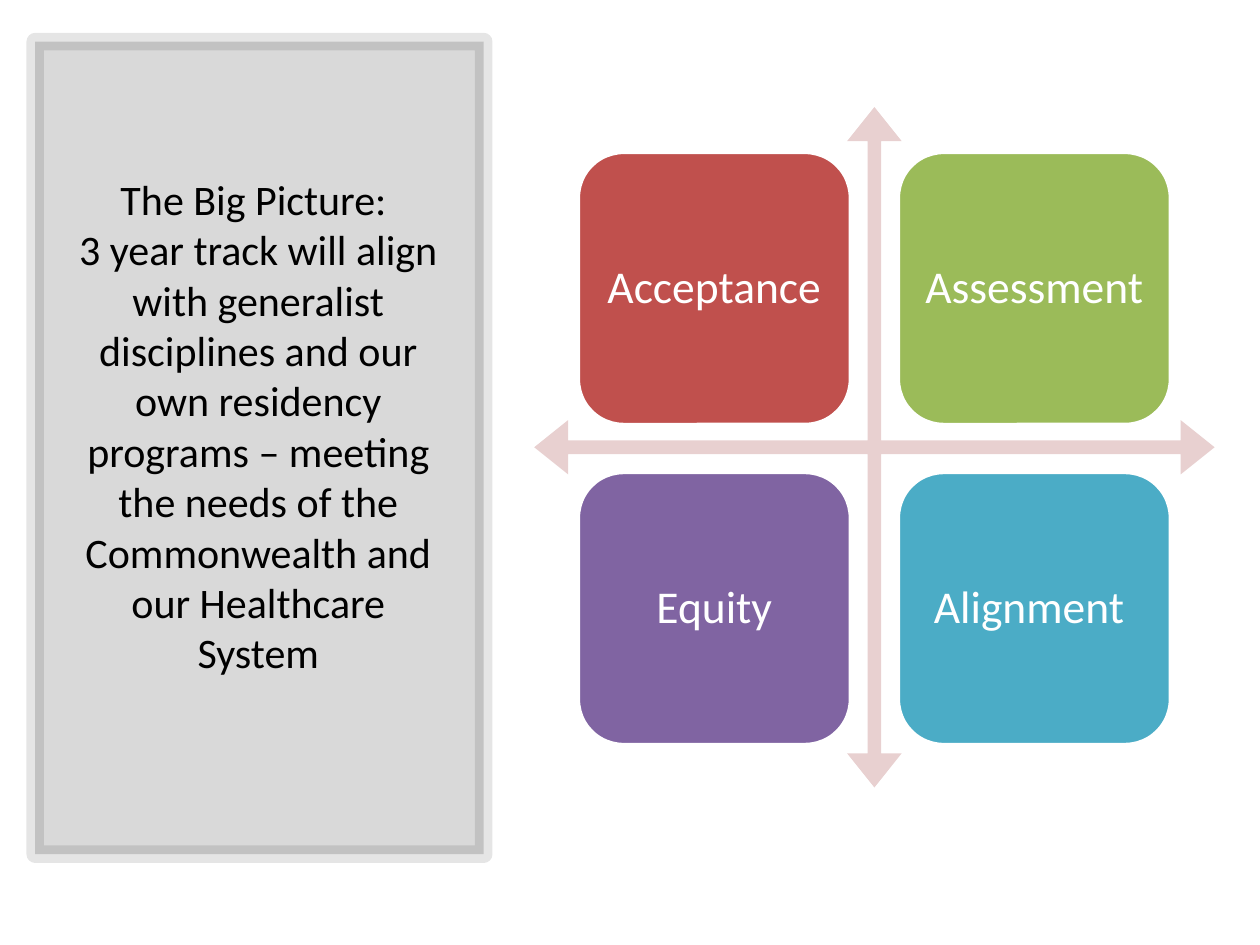
from lxml.etree import SubElement
from pptx import Presentation
from pptx.dml.color import RGBColor
from pptx.enum.shapes import MSO_SHAPE as Preset
from pptx.enum.text import MSO_ANCHOR as Anchor, MSO_AUTO_SIZE as AutoSize, PP_ALIGN as Align
from pptx.oxml.ns import qn
from pptx.util import Inches, Pt

COLORS = {
    "black": "000000",
    "white": "FFFFFF",
    "arrows": "E8D0D0",
    "red": "C0504D",
    "green": "9BBB59",
    "purple": "8064A2",
    "teal": "4BACC6",
}
FONT = "Calibri"
TITLE_LINES = [
    "The Big Picture: ",
    "3 year track will align with generalist disciplines and our own residency "
    "programs – meeting the needs of the Commonwealth and our Healthcare System",
]
QUADRANTS = [
    ("Acceptance", "red"),
    ("Assessment", "green"),
    ("Equity", "purple"),
    ("Alignment ", "teal"),
]
GRID_LEFT, GRID_TOP = 4.59, 1.21
TILE_SIZE, TILE_STEP = 2.16, 2.54


def rgb(name):
    return RGBColor.from_string(COLORS[name])


def set_opacity(fill, percent):
    """Make a solid fill in an RGB colour translucent."""
    color = fill._xPr.find(qn("a:solidFill")).find(qn("a:srgbClr"))
    SubElement(color, qn("a:alpha"), val=str(percent * 1000))


def add_filled_shape(page, preset, left, top, width, height, color):
    shape = page.shapes.add_shape(
        preset, Inches(left), Inches(top), Inches(width), Inches(height))
    shape.shadow.inherit = False
    shape.fill.solid()
    shape.fill.fore_color.rgb = rgb(color)
    shape.line.fill.background()
    return shape


def set_outline(shape, color, width):
    shape.line.fill.solid()
    shape.line.color.rgb = rgb(color)
    shape.line.width = Pt(width)


def add_span(para, text, size, color):
    span = para.add_run()
    span.text = text
    span.font.name = FONT
    span.font.size = Pt(size)
    span.font.color.rgb = rgb(color)


def add_panel(page):
    """Draw the translucent grey panel behind the title."""
    panel = add_filled_shape(page, Preset.RECTANGLE, 0.28, 0.33, 3.56, 6.45, "black")
    set_outline(panel, "black", 10)
    set_opacity(panel.fill, 15)
    set_opacity(panel.line.fill, 10)
    page.shapes.title.element.addprevious(panel.element)


def fill_title(page):
    title = page.shapes.title
    title.left, title.top = Inches(0.49), Inches(0.7)
    title.width, title.height = Inches(3.12), Inches(5.75)
    frame = title.text_frame
    frame.word_wrap = True
    frame.auto_size = AutoSize.NONE
    frame.vertical_anchor = Anchor.MIDDLE
    frame.margin_bottom = Inches(0.45)
    para = frame.paragraphs[0]
    para.alignment = Align.CENTER
    for index, line in enumerate(TITLE_LINES):
        if index:
            para.add_line_break()
        add_span(para, line, 24, "black")


def add_cross_arrows(page):
    arrows = add_filled_shape(page, Preset.QUAD_ARROW, 4.24, 0.85, 5.4, 5.4, "arrows")
    for index, value in enumerate((0.02, 0.04, 0.05)):
        arrows.adjustments[index] = value


def add_tile(page, left, top, label, color):
    tile = add_filled_shape(
        page, Preset.ROUNDED_RECTANGLE, left, top, TILE_SIZE, TILE_SIZE, color)
    set_outline(tile, "white", 2)
    frame = tile.text_frame
    frame.word_wrap = True
    frame.vertical_anchor = Anchor.MIDDLE
    frame.margin_left = frame.margin_right = Inches(0.1)
    para = frame.paragraphs[0]
    para.alignment = Align.CENTER
    para.line_spacing = 0.9
    add_span(para, label, 26, "white")


def main():
    deck = Presentation()
    deck.slide_width, deck.slide_height = Inches(10), Inches(7.5)
    page = deck.slides.add_slide(deck.slide_layouts[5])
    fill_title(page)
    add_panel(page)
    add_cross_arrows(page)
    for index, (label, color) in enumerate(QUADRANTS):
        row, column = divmod(index, 2)
        add_tile(page, GRID_LEFT + column * TILE_STEP, GRID_TOP + row * TILE_STEP,
                 label, color)
    deck.save("out.pptx")


if __name__ == "__main__":
    main()
